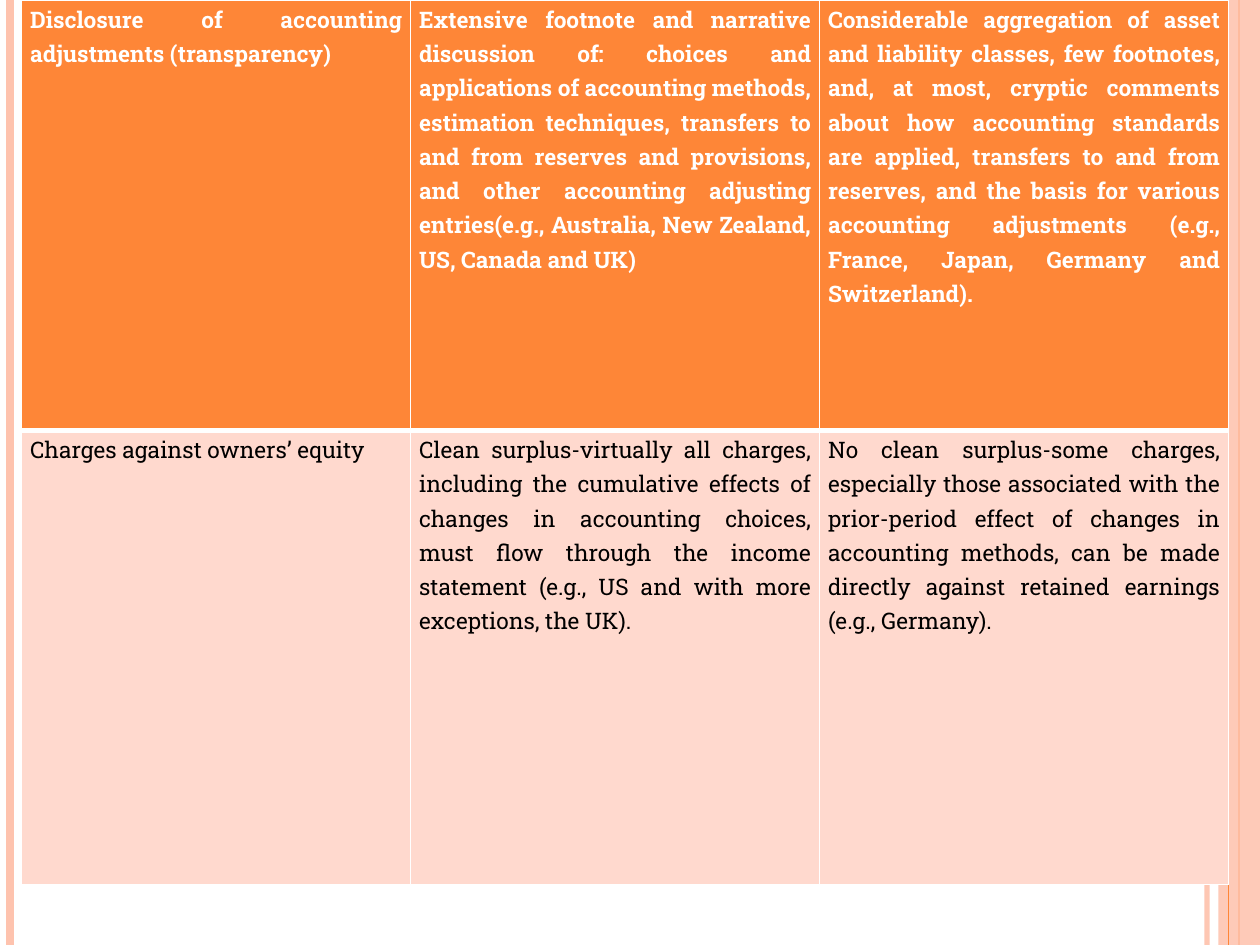
from lxml.etree import SubElement
from pptx import Presentation
from pptx.dml.color import RGBColor
from pptx.enum.shapes import MSO_CONNECTOR as Connector, MSO_SHAPE as Shape
from pptx.enum.text import PP_ALIGN as Align
from pptx.oxml import parse_xml
from pptx.oxml.ns import nsdecls, qn
from pptx.util import Inches, Pt

WIDTH, HEIGHT = 10, 7.5
COLORS = {"orange": "FE8637", "peach": "FEC3AE", "blush": "FFD9CE", "white": "FFFFFF", "black": "000000"}
HEADER = {"name": "Roboto Slab", "size": Pt(13), "bold": True}
BODY = {**HEADER, "bold": False}
ROWS = [
    ["Disclosure of accounting adjustments (transparency)",
     "Extensive footnote and narrative discussion of: choices and applications of accounting methods, "
     "estimation techniques, transfers to and from reserves and provisions, and other accounting "
     "adjusting entries(e.g., Australia, New Zealand, US, Canada and UK)",
     "Considerable aggregation of asset and liability classes, few footnotes, and, at most, cryptic "
     "comments about how accounting standards are applied, transfers to and from reserves, and the basis "
     "for various accounting adjustments (e.g., France, Japan, Germany and Switzerland)."],
    ["Charges against owners’ equity",
     "Clean surplus-virtually all charges, including the cumulative effects of changes in accounting "
     "choices, must flow through the income statement (e.g., US and with more exceptions, the UK).",
     "No clean surplus-some charges, especially those associated with the prior-period effect of changes "
     "in accounting methods, can be made directly against retained earnings (e.g., Germany)."],
]
STYLES = [
    {"fill": "orange", "text": "white", "font": HEADER, "top": 1, "bottom": 3},
    {"fill": "blush", "text": "black", "font": BODY, "top": 3, "bottom": 1},
]


def rgb(name):
    """Return the named colour."""
    return RGBColor.from_string(COLORS[name])


def set_formats(target, formats):
    """Set each attribute of the target from a dict."""
    for name, value in formats.items():
        setattr(target, name, value)


def set_opacity(shape, percent):
    """Make the colour of a shape or line partly transparent."""
    for color in shape._element.spPr.iter(qn("a:srgbClr")):
        SubElement(color, qn("a:alpha"), val=str(percent * 1000))


def add_stripe(page, x, color, weight, opacity=100):
    """Draw a vertical line over the full height of the page."""
    stripe = page.shapes.add_connector(Connector.STRAIGHT, Inches(x), 0, Inches(x), Inches(HEIGHT))
    stripe.line.color.rgb = rgb(color)
    stripe.line.width = Pt(weight)
    set_opacity(stripe, opacity)
    SubElement(stripe._element.spPr, qn("a:effectLst"))


def add_margins(page, band_width):
    """Draw the stripes and the band along the page edges."""
    add_stripe(page, WIDTH - 0.42, "peach", 3, 93)
    add_stripe(page, 0.08, "peach", 4.5)
    add_stripe(page, WIDTH - band_width / 2, "orange", 1.5)
    band = page.shapes.add_shape(
        Shape.RECTANGLE, Inches(WIDTH - band_width), 0, Inches(band_width), Inches(HEIGHT))
    band.shadow.inherit = False
    band.fill.solid()
    band.fill.fore_color.rgb = rgb("peach")
    band.line.fill.background()
    set_opacity(band, 87)
    add_stripe(page, WIDTH - 0.25, "orange", 0.75)


def add_borders(cell, weights):
    """Give the cell white borders, by side in left, right, top, bottom order."""
    for index, (side, weight) in enumerate(weights.items()):
        border = parse_xml(
            f'<a:ln{side} {nsdecls("a")} w="{Pt(weight)}"><a:solidFill>'
            f'<a:srgbClr val="{COLORS["white"]}"/></a:solidFill></a:ln{side}>')
        cell._tc.get_or_add_tcPr().insert(index, border)


def fill_cell(cell, text, style):
    """Write and format one table cell."""
    inset = Inches(0.07)
    set_formats(cell, {"margin_left": inset, "margin_right": inset, "margin_top": 0, "margin_bottom": 0})
    cell.fill.solid()
    cell.fill.fore_color.rgb = rgb(style["fill"])
    add_borders(cell, {"L": 1, "R": 1, "T": style["top"], "B": style["bottom"]})
    para = cell.text_frame.paragraphs[0]
    set_formats(para, {"alignment": Align.JUSTIFY, "line_spacing": 1.15})
    span = para.add_run()
    span.text = text
    set_formats(span.font, style["font"])
    span.font.color.rgb = rgb(style["text"])


def add_comparison(page, box, columns, rows):
    """Place the comparison table in the box, with column and row shares."""
    left, top, width, height = (Inches(value) for value in box)
    table = page.shapes.add_table(len(rows), len(columns), left, top, width, height).table
    for column, share in zip(table.columns, columns):
        column.width = int(width * share / sum(columns))
    for row, share, texts, style in zip(table.rows, rows, ROWS, STYLES):
        row.height = int(height * share / sum(rows))
        for cell, text in zip(row.cells, texts):
            fill_cell(cell, text, style)


def main():
    """Build and save the deck."""
    deck = Presentation()
    set_formats(deck, {"slide_width": Inches(WIDTH), "slide_height": Inches(HEIGHT)})
    page = deck.slides.add_slide(deck.slide_layouts[6])
    add_margins(page, 0.33)
    add_comparison(page, (0.17, 0, 9.58, 7.02), (3.09, 3.25, 3.25), (3.42, 3.61))
    deck.save("out.pptx")


if __name__ == "__main__":
    main()
